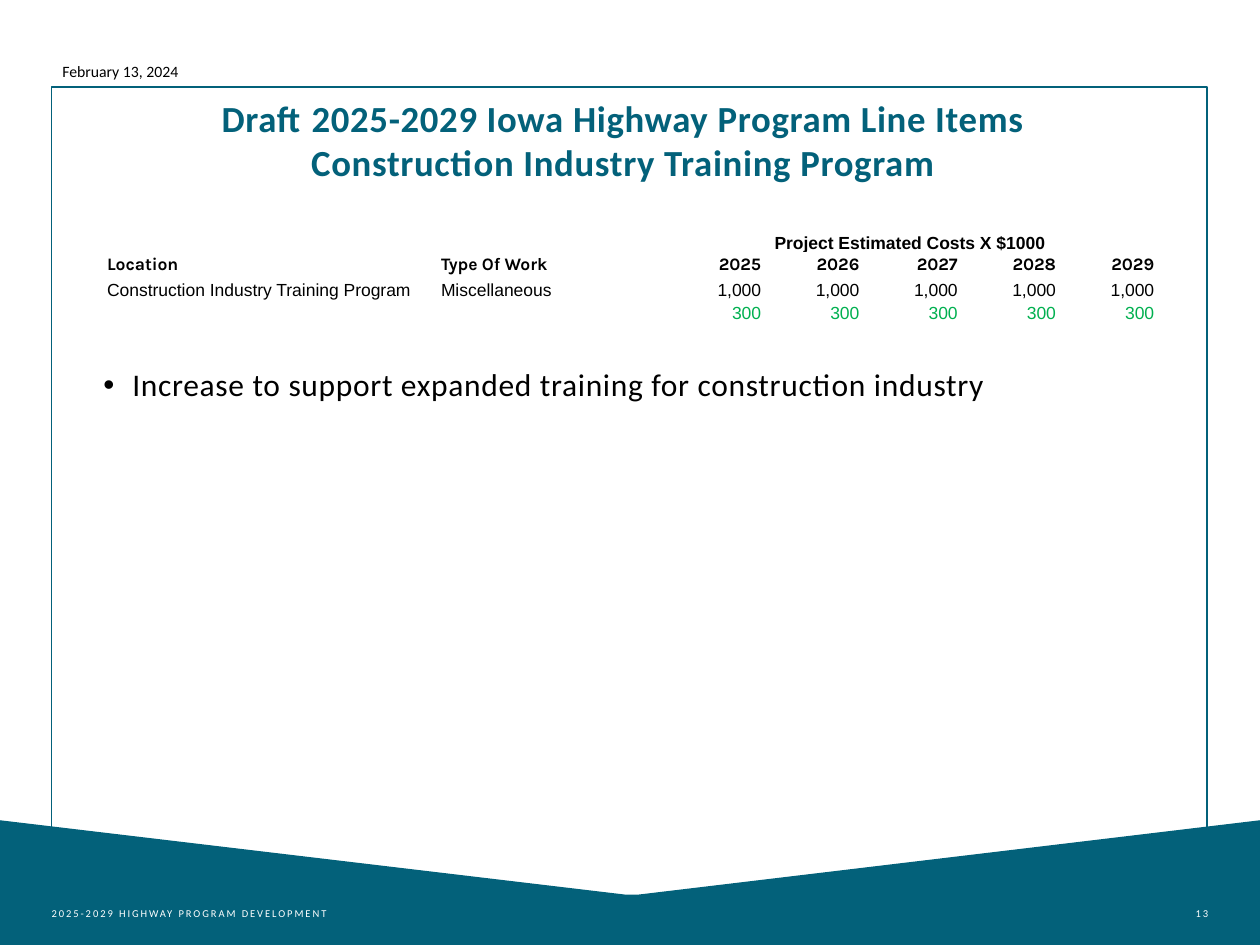
"""Build the Construction Industry Training Program line item slide."""
import pptx
import pptx.dml.color
import pptx.enum.shapes
import pptx.enum.text
import pptx.oxml.ns
import pptx.util
from lxml import etree

Inches = pptx.util.Inches
Pt = pptx.util.Pt
RGBColor = pptx.dml.color.RGBColor
ALIGN = pptx.enum.text.PP_ALIGN
ANCHOR = pptx.enum.text.MSO_ANCHOR
AUTO = pptx.enum.text.MSO_AUTO_SIZE
qn = pptx.oxml.ns.qn

TEAL = RGBColor(0x03, 0x61, 0x7A)
GREEN = RGBColor(0x00, 0xB0, 0x50)
BLACK = RGBColor(0x00, 0x00, 0x00)
WHITE = RGBColor(0xFF, 0xFF, 0xFF)

TITLE = {"name": "Calibri", "size": Pt(21), "bold": True}
BODY = {"name": "Calibri", "size": Pt(18), "bold": False}
DATE = {"name": "Calibri", "size": Pt(9)}
FOOTER = {"name": "Calibri", "size": Pt(6)}
HEADING = {"name": "Karla", "size": Pt(10), "bold": True}
COST_HEADING = {"name": "Arial", "size": Pt(10), "bold": True}
COST = {"name": "Arial", "size": Pt(10), "bold": False}

YEARS = [str(year) for year in range(2025, 2030)]
COLUMN_WIDTHS = [2.65, 1.78] + [0.78] * len(YEARS)
ROW_HEIGHTS = [0.21, 0.21, 0.16, 0.21]
ROWS = [
    (["", "", "Project Estimated Costs X $1000"] + [""] * 4, COST_HEADING, BLACK),
    (["Location", "Type Of Work"] + YEARS, HEADING, BLACK),
    (["Construction Industry Training Program", "Miscellaneous"]
     + ["1,000"] * len(YEARS), COST, BLACK),
    (["", ""] + ["300"] * len(YEARS), COST, GREEN),
]


def set_attributes(obj, values):
    """Set each named attribute of an object."""
    for name, value in values.items():
        setattr(obj, name, value)


def place(s, left, top, width, height):
    """Move and size a shape in inches."""
    set_attributes(s, {"left": Inches(left), "top": Inches(top),
                       "width": Inches(width), "height": Inches(height)})


def set_frame(tf, anchor, margins=(0, 0.05, 0.1, 0.05), wrap=True, auto=AUTO.NONE):
    """Set the anchor, insets, wrapping and fitting of a text frame."""
    left, top, right, bottom = map(Inches, margins)
    set_attributes(tf, {"margin_left": left, "margin_top": top,
                        "margin_right": right, "margin_bottom": bottom,
                        "word_wrap": wrap, "auto_size": auto,
                        "vertical_anchor": anchor})


def write(p, text, fmt, color, align=ALIGN.LEFT, spacing=0):
    """Write one formatted run into a paragraph."""
    set_attributes(p, {"alignment": align, "space_before": Pt(0)})
    r = p.add_run()
    r.text = text
    set_attributes(r.font, fmt)
    r.font.color.rgb = color
    if spacing:
        r.font._element.set("spc", str(round(spacing * 100)))


def add_banner(slide):
    """Add the notched band along the bottom of the slide."""
    points = [(10, 7.5), (0, 7.5), (0, 6.51), (4.96, 7.1), (5.07, 7.1)]
    builder = slide.shapes.build_freeform(Inches(10), Inches(6.51))
    builder.add_line_segments([(Inches(x), Inches(y)) for x, y in points])
    s = builder.convert_to_shape()
    s.shadow.inherit = False
    s.fill.solid()
    s.fill.fore_color.rgb = TEAL
    s.line.fill.background()


def add_border(slide):
    """Add the thin frame around the content."""
    s = slide.shapes.add_shape(pptx.enum.shapes.MSO_SHAPE.RECTANGLE, Inches(0.41),
                               Inches(0.69), Inches(9.17), Inches(6.66))
    s.shadow.inherit = False
    s.fill.background()
    s.line.color.rgb = TEAL
    s.line.width = Pt(1)


def add_footer(slide, text, left, width, align):
    """Add a small spaced label on the banner."""
    s = slide.shapes.add_textbox(Inches(left), Inches(6.95), Inches(width), Inches(0.4))
    set_frame(s.text_frame, ANCHOR.BOTTOM, (0, 0.05, 0, 0.05))
    write(s.text_frame.paragraphs[0], text, FOOTER, WHITE, align, 1.1)


def add_date(slide):
    """Add the date above the frame."""
    s = slide.shapes.add_textbox(Inches(0.32), Inches(0.44), Inches(1.27), Inches(0.25))
    set_frame(s.text_frame, ANCHOR.TOP, (0.1, 0.05, 0.1, 0.05), False,
              AUTO.SHAPE_TO_FIT_TEXT)
    write(s.text_frame.paragraphs[0], "February 13, 2024", DATE, BLACK, ALIGN.CENTER)


def fill_title(s, lines):
    """Write the title, one paragraph a line."""
    place(s, 0.82, 0.71, 8.35, 0.83)
    tf = s.text_frame
    set_frame(tf, ANCHOR.TOP)
    for i, line in enumerate(lines):
        p = tf.add_paragraph() if i else tf.paragraphs[0]
        write(p, line, TITLE, TEAL, ALIGN.CENTER, 0.4)


def fill_body(s, text):
    """Write the bulleted statement."""
    place(s, 0.82, 2.85, 8.35, 3.08)
    set_frame(s.text_frame, ANCHOR.TOP)
    p = s.text_frame.paragraphs[0]
    write(p, text, BODY, BLACK, spacing=0.4)
    pPr = p._p.get_or_add_pPr()
    pPr.set("marL", str(Inches(0.23)))
    pPr.set("indent", str(-Inches(0.23)))
    etree.SubElement(pPr, qn("a:buChar")).set("char", "•")


def fill_cell(cell, text, fmt, color, align):
    """Format one cell, keeping an empty one as low as its row."""
    set_attributes(cell, {"margin_left": Inches(0.01), "margin_top": Inches(0.01),
                          "margin_right": Inches(0.01), "margin_bottom": 0})
    cell.fill.background()
    p = cell.text_frame.paragraphs[0]
    if text:
        write(p, text, fmt, color, align)
    else:
        etree.SubElement(p._p, qn("a:endParaRPr")).set("sz", "1000")


def add_cost_table(slide):
    """Add the table of estimated costs by year."""
    s = slide.shapes.add_table(len(ROWS), len(COLUMN_WIDTHS), Inches(0.84), Inches(1.8),
                               Inches(sum(COLUMN_WIDTHS)), Inches(sum(ROW_HEIGHTS)))
    table = s.table
    set_attributes(table, {"first_row": False, "horz_banding": False})
    for column, width in zip(table.columns, COLUMN_WIDTHS):
        column.width = Inches(width)
    for i, (texts, fmt, color) in enumerate(ROWS):
        table.rows[i].height = Inches(ROW_HEIGHTS[i])
        for j, text in enumerate(texts):
            align = ALIGN.LEFT if j < 2 else ALIGN.RIGHT
            fill_cell(table.cell(i, j), text, fmt, color, align)
    heading = table.cell(0, 2)
    heading.merge(table.cell(0, len(COLUMN_WIDTHS) - 1))
    heading.vertical_anchor = ANCHOR.BOTTOM
    heading.text_frame.paragraphs[0].alignment = ALIGN.CENTER
    for cell in table.rows[1].cells:
        cell.fill.solid()
        cell.fill.fore_color.rgb = WHITE


def main():
    """Build and save the slide."""
    prs = pptx.Presentation()
    set_attributes(prs, {"slide_width": Inches(10), "slide_height": Inches(7.5)})
    slide = prs.slides.add_slide(prs.slide_layouts[1])
    add_banner(slide)
    add_border(slide)
    add_footer(slide, "2025-2029 HIGHWAY PROGRAM DEVELOPMENT", 0.41, 2.67, ALIGN.LEFT)
    add_footer(slide, "13", 8.62, 0.97, ALIGN.RIGHT)
    add_date(slide)
    fill_title(slide.shapes.title, ["Draft 2025-2029 Iowa Highway Program Line Items",
                                    "Construction Industry Training Program"])
    fill_body(slide.placeholders[1],
              "Increase to support expanded training for construction industry")
    add_cost_table(slide)
    prs.save("out.pptx")


if __name__ == "__main__":
    main()
